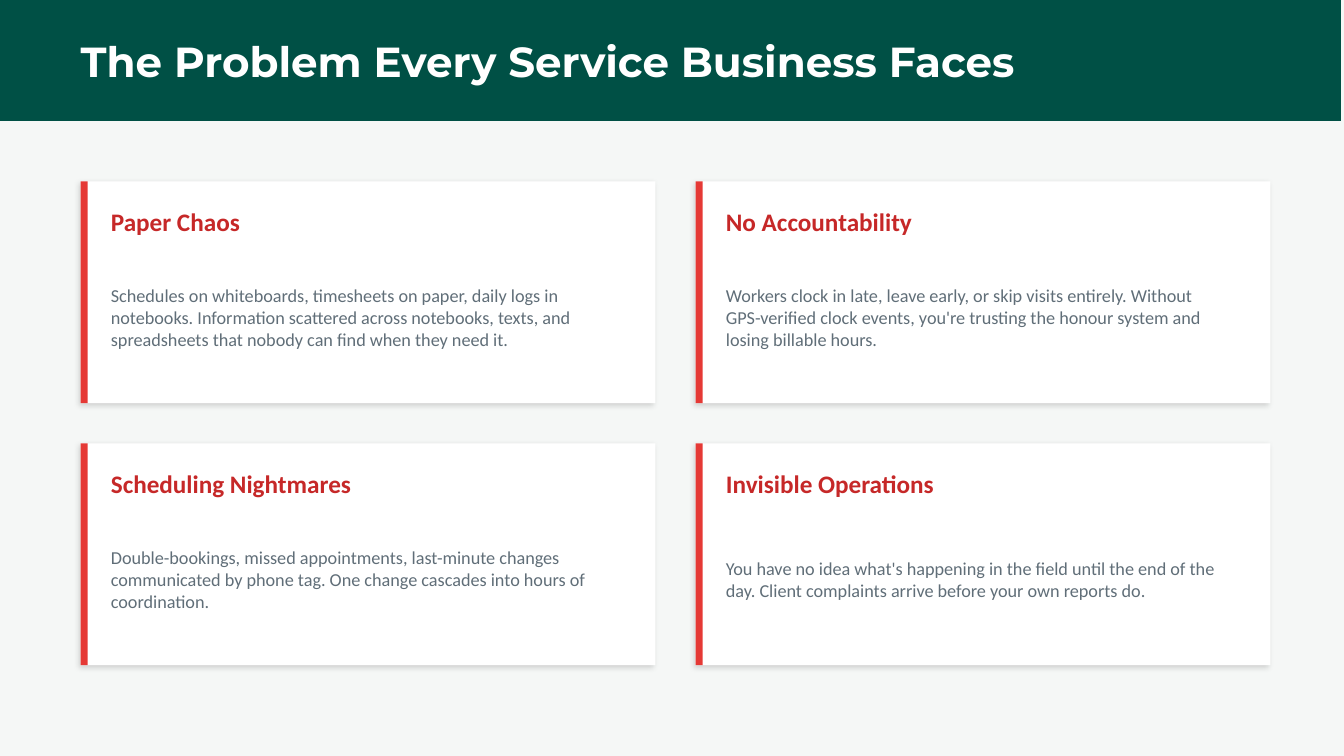
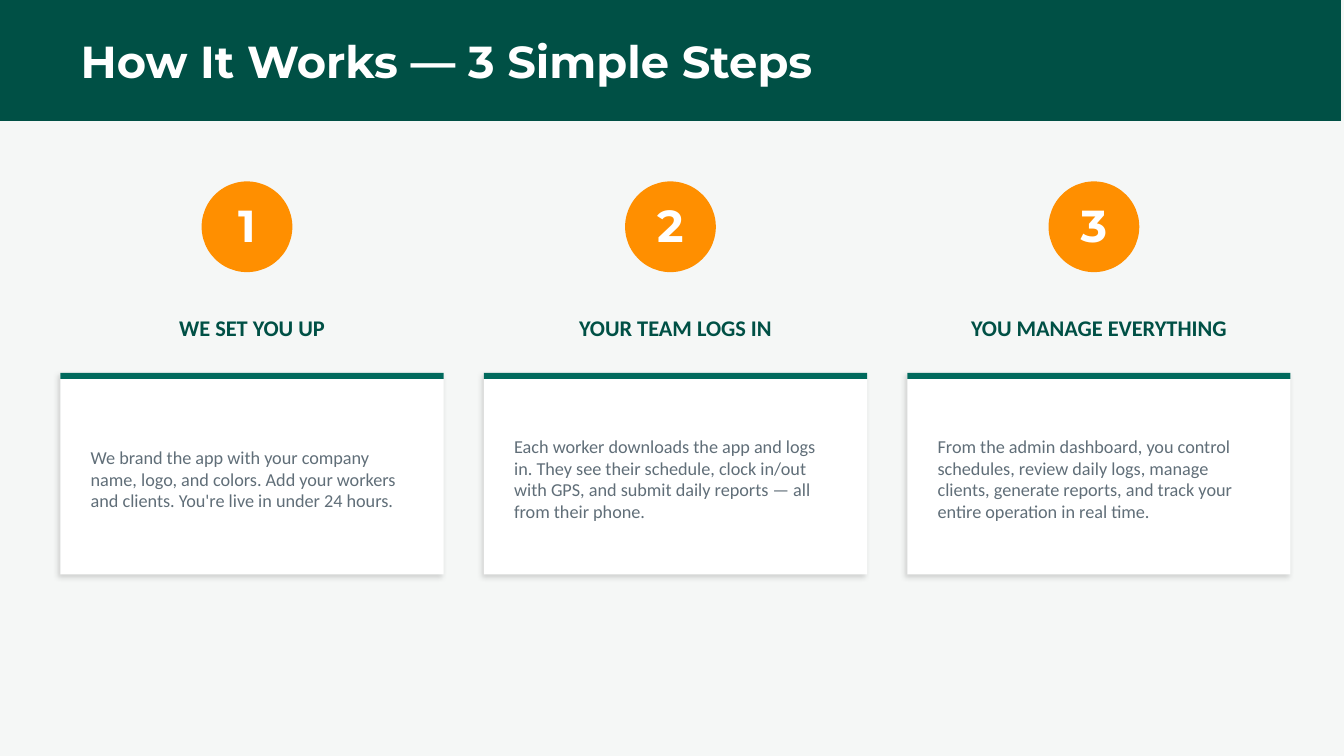
from lxml import etree
from pptx import Presentation
from pptx.dml.color import RGBColor
from pptx.enum.shapes import MSO_SHAPE
from pptx.enum.text import MSO_ANCHOR, MSO_AUTO_SIZE, PP_ALIGN
from pptx.oxml.ns import qn
from pptx.util import Inches, Pt

RECTANGLE, OVAL = MSO_SHAPE.RECTANGLE, MSO_SHAPE.OVAL
MIDDLE = MSO_ANCHOR.MIDDLE
NO_AUTOFIT = MSO_AUTO_SIZE.NONE
LEFT, CENTER = PP_ALIGN.LEFT, PP_ALIGN.CENTER

WHITE = RGBColor(0xFF, 0xFF, 0xFF)
PALE = RGBColor(0xF5, 0xF7, 0xF6)
DARK_GREEN = RGBColor(0x00, 0x50, 0x45)
TEAL = RGBColor(0x00, 0x69, 0x5C)
RED = RGBColor(0xE5, 0x39, 0x35)
DARK_RED = RGBColor(0xC6, 0x28, 0x28)
ORANGE = RGBColor(0xFF, 0x8F, 0x00)
GRAY = RGBColor(0x60, 0x6E, 0x78)

HEADING_FONT, BODY_FONT = "Montserrat", "Calibri"
TITLE_ONLY = 5

PROBLEMS = [
    ("Paper Chaos",
     "Schedules on whiteboards, timesheets on paper, daily logs in notebooks. "
     "Information scattered across notebooks, texts, and spreadsheets that "
     "nobody can find when they need it."),
    ("No Accountability",
     "Workers clock in late, leave early, or skip visits entirely. Without "
     "GPS-verified clock events, you're trusting the honour system and losing "
     "billable hours."),
    ("Scheduling Nightmares",
     "Double-bookings, missed appointments, last-minute changes communicated "
     "by phone tag. One change cascades into hours of coordination."),
    ("Invisible Operations",
     "You have no idea what's happening in the field until the end of the day. "
     "Client complaints arrive before your own reports do."),
]

STEPS = [
    ("WE SET YOU UP",
     "We brand the app with your company name, logo, and colors. Add your "
     "workers and clients. You're live in under 24 hours."),
    ("YOUR TEAM LOGS IN",
     "Each worker downloads the app and logs in. They see their schedule, "
     "clock in/out with GPS, and submit daily reports — all from their phone."),
    ("YOU MANAGE EVERYTHING",
     "From the admin dashboard, you control schedules, review daily logs, "
     "manage clients, generate reports, and track your entire operation in "
     "real time."),
]


def write(shape, text, size, color, bold=False, font=BODY_FONT, align=LEFT):
    frame = shape.text_frame
    frame.word_wrap = True
    frame.auto_size = NO_AUTOFIT
    frame.vertical_anchor = MIDDLE
    frame.margin_left = frame.margin_right = 0
    frame.margin_top = frame.margin_bottom = 0
    para = frame.paragraphs[0]
    para.alignment = align
    span = para.add_run()
    span.text = text
    span.font.name = font
    span.font.size = Pt(size)
    span.font.bold = bold
    span.font.color.rgb = color


def add_text(page, left, top, width, height, text, size, color, **style):
    box = page.shapes.add_textbox(
        Inches(left), Inches(top), Inches(width), Inches(height))
    write(box, text, size, color, **style)


def add_block(page, left, top, width, height, color, kind=RECTANGLE):
    block = page.shapes.add_shape(
        kind, Inches(left), Inches(top), Inches(width), Inches(height))
    block.shadow.inherit = False
    block.fill.solid()
    block.fill.fore_color.rgb = color
    block.line.fill.background()
    return block


def add_panel(page, left, top, width, height):
    panel = add_block(page, left, top, width, height, WHITE)
    effects = panel.element.spPr.find(qn("a:effectLst"))
    shadow = etree.SubElement(
        effects, qn("a:outerShdw"), blurRad=str(Pt(4)), dist=str(Pt(2)),
        dir=str(135 * 60000), algn="bl", rotWithShape="0")
    tint = etree.SubElement(shadow, qn("a:srgbClr"), val="000000")
    etree.SubElement(tint, qn("a:alpha"), val="15000")


def add_page(deck, text, size):
    page = deck.slides.add_slide(deck.slide_layouts[TITLE_ONLY])
    title = page.shapes.title
    band = add_block(page, 0, 0, 13.3, 1.2, DARK_GREEN)
    title.element.addprevious(band.element)
    title.left, title.top = Inches(0.8), Inches(0.25)
    title.width, title.height = Inches(12), Inches(0.7)
    write(title, text, size, WHITE, bold=True, font=HEADING_FONT)
    return page


def add_problem(page, left, top, heading, detail):
    width, height, inset = 5.7, 2.2, 0.3
    add_panel(page, left, top, width, height)
    add_block(page, left, top, 0.07, height, RED)
    add_text(page, left + inset, top + 0.2, 5, 0.4, heading, 18, DARK_RED,
             bold=True)
    add_text(page, left + inset, top + 0.7, 5, 1.3, detail, 13, GRAY)


def add_step(page, left, top, number, heading, detail):
    width, inset, circle = 3.8, 0.3, 0.9
    badge = add_block(page, left + 1.4, top, circle, circle, ORANGE, OVAL)
    write(badge, str(number), 32, WHITE, bold=True, font=HEADING_FONT,
          align=CENTER)
    badge.text_frame.margin_bottom = Inches(0.04)
    add_text(page, left, top + 1.2, width, 0.5, heading, 16, DARK_GREEN,
             bold=True, align=CENTER)
    panel_top = top + 1.9
    add_panel(page, left, panel_top, width, 2)
    add_block(page, left, panel_top, width, 0.06, TEAL)
    add_text(page, left + inset, panel_top + 0.3, width - 2 * inset, 1.5,
             detail, 13, GRAY)


def build_problems(deck):
    page = add_page(deck, "The Problem Every Service Business Faces", 30)
    for index, (heading, detail) in enumerate(PROBLEMS):
        row, column = divmod(index, 2)
        add_problem(page, 0.8 + 6.1 * column, 1.8 + 2.6 * row, heading, detail)


def build_steps(deck):
    page = add_page(deck, "How It Works — 3 Simple Steps", 32)
    for index, (heading, detail) in enumerate(STEPS):
        add_step(page, 0.6 + 4.2 * index, 1.8, index + 1, heading, detail)


def main():
    deck = Presentation()
    deck.slide_width, deck.slide_height = Inches(13.33), Inches(7.5)
    backdrop = deck.slide_master.background.fill
    backdrop.solid()
    backdrop.fore_color.rgb = PALE
    build_problems(deck)
    build_steps(deck)
    deck.save("out.pptx")


if __name__ == "__main__":
    main()
